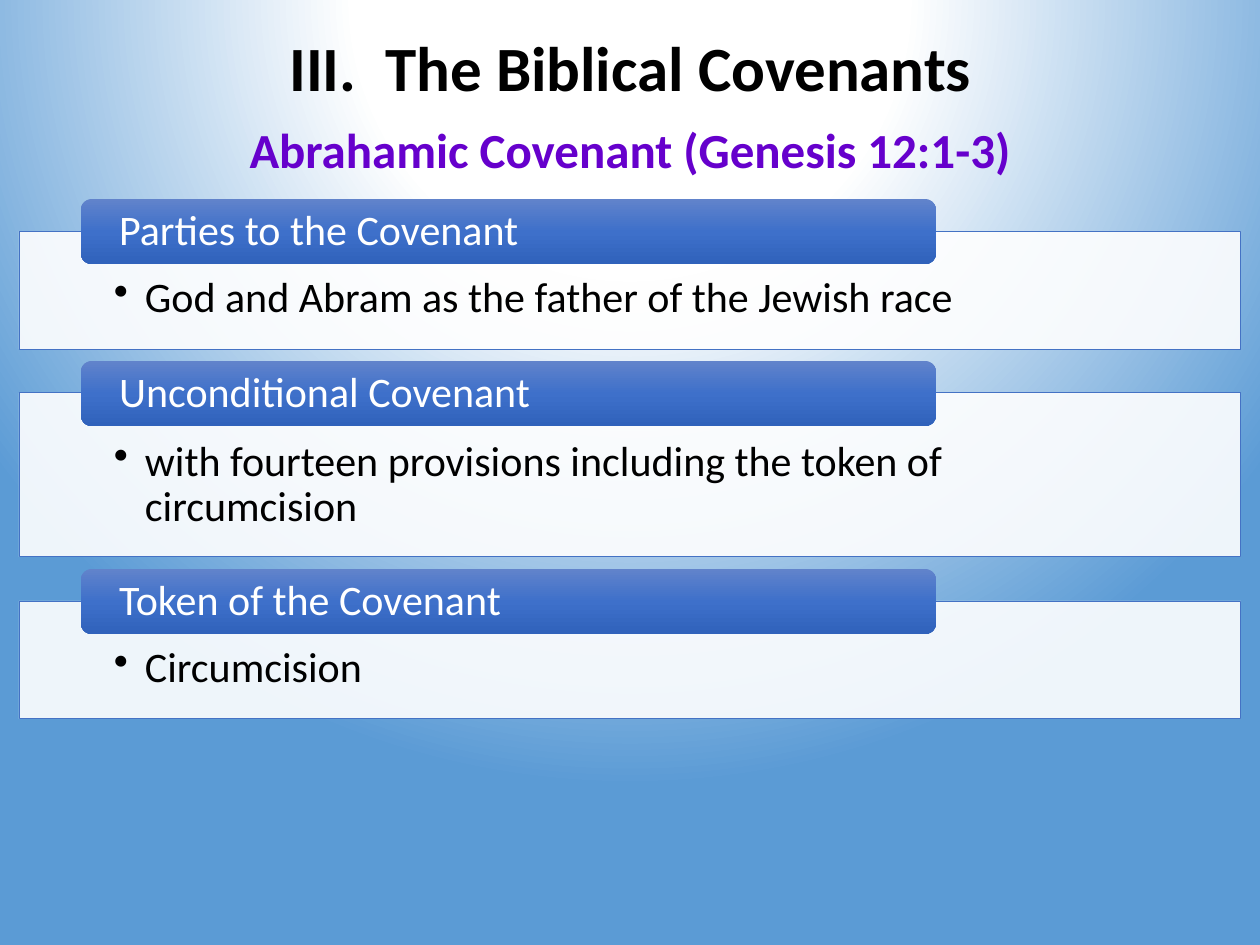
from dataclasses import dataclass

from lxml.etree import SubElement
from pptx import Presentation
from pptx.dml.color import RGBColor
from pptx.enum.shapes import MSO_SHAPE
from pptx.enum.text import MSO_ANCHOR, PP_ALIGN
from pptx.oxml.ns import qn
from pptx.util import Emu, Pt

TITLE = "The Biblical Covenants"
SUBTITLE = "Abrahamic Covenant (Genesis 12:1-3)"
SECTIONS = [  # heading, point, panel height, anchor of the point
    ("Parties to the Covenant", "God and Abram as the father of the Jewish race",
     118, MSO_ANCHOR.TOP),
    ("Unconditional Covenant",
     "with fourteen provisions including the token of circumcision",
     164, MSO_ANCHOR.MIDDLE),
    ("Token of the Covenant", "Circumcision", 118, MSO_ANCHOR.TOP),
]


@dataclass(frozen=True)
class Theme:
    font: str = "Calibri"
    title: int = 36
    subtitle: int = 28
    body: int = 24
    black: str = "000000"
    white: str = "FFFFFF"
    purple: str = "6600CC"
    outline: str = "4472C4"
    heading: tuple = ((0, "6183CB"), (50, "3E70CA"), (100, "3062BB"))
    backdrop: tuple = ((0, "FFFFFF"), (35, "FFFFFF"), (100, "5B9BD5"))


THEME = Theme()
WIDTH, HEIGHT = 1260, 945
PANEL_X, PANEL_TOP, PANEL_GAP = 19, 231, 44
HEAD_X, HEAD_W, HEAD_H, HEAD_RISE = 81, 855, 65, 32


def px(n):
    return Emu(round(n * 914400 / 126))


def box(*lengths):
    return [px(n) for n in lengths]


def set_gradient(fill, grad_parent, stops, angle=None):
    """Linear when an angle is given, otherwise circular from above the slide."""
    fill.gradient()
    grad = grad_parent.find(qn("a:gradFill"))
    for child in list(grad):
        grad.remove(child)
    gs_list = SubElement(grad, qn("a:gsLst"))
    for position, colour in stops:
        gs = SubElement(gs_list, qn("a:gs"), pos=str(position * 1000))
        SubElement(gs, qn("a:srgbClr"), val=colour)
    if angle is not None:
        SubElement(grad, qn("a:lin"), ang=str(angle * 60000), scaled="0")
    else:
        circle = SubElement(grad, qn("a:path"), path="circle")
        SubElement(circle, qn("a:fillToRect"),
                   l="50000", t="-80000", r="50000", b="180000")


def add_text(shape, text, size=THEME.body, color=THEME.black, bold=False,
             align=PP_ALIGN.LEFT, anchor=MSO_ANCHOR.MIDDLE, margins=(13, 6, 13, 6),
             spacing=0.9, level=0, hang=0, bullet=None):
    """bullet is a pair: the bullet tag and its attributes."""
    tf = shape.text_frame
    tf.word_wrap = True
    tf.vertical_anchor = anchor
    tf.margin_left, tf.margin_top, tf.margin_right, tf.margin_bottom = box(*margins)
    p = tf.paragraphs[0]
    p.alignment, p.level, p.line_spacing = align, level, spacing
    if bullet:
        tag, attributes = bullet
        pPr = p._p.get_or_add_pPr()
        pPr.set("marL", str(px(hang)))
        pPr.set("indent", str(-px(hang)))
        SubElement(pPr, qn(tag), attributes)
    r = p.add_run()
    r.text = text
    r.font.name, r.font.size, r.font.bold = THEME.font, Pt(size), bold
    r.font.color.rgb = RGBColor.from_string(color)


def add_panel(s, y, height, point, anchor):
    sp = s.shapes.add_shape(MSO_SHAPE.RECTANGLE,
                            *box(PANEL_X, y, WIDTH - 2 * PANEL_X, height))
    sp.shadow.inherit = False
    sp.fill.solid()
    sp.fill.fore_color.rgb = RGBColor.from_string(THEME.white)
    colour = sp._element.spPr.find(qn("a:solidFill")).find(qn("a:srgbClr"))
    SubElement(colour, qn("a:alpha"), val="90000")
    sp.line.color.rgb = RGBColor.from_string(THEME.outline)
    sp.line.width = Pt(0.5)
    add_text(sp, point, anchor=anchor, margins=(95, 45, 95, 24), level=1,
             hang=31, bullet=("a:buChar", {"char": "•"}))


def add_heading(s, y, heading):
    sp = s.shapes.add_shape(MSO_SHAPE.ROUNDED_RECTANGLE,
                            *box(HEAD_X, y, HEAD_W, HEAD_H))
    sp.shadow.inherit = False
    set_gradient(sp.fill, sp._element.spPr, THEME.heading, angle=90)
    sp.line.fill.background()
    add_text(sp, heading, color=THEME.white, margins=(35, 0, 35, 0))


def main():
    prs = Presentation()
    prs.slide_width, prs.slide_height = box(WIDTH, HEIGHT)
    s = prs.slides.add_slide(prs.slide_layouts[6])
    fill = s.background.fill
    set_gradient(fill, s.element.xpath("p:cSld/p:bg/p:bgPr")[0], THEME.backdrop)

    y = PANEL_TOP
    for heading, point, height, anchor in SECTIONS:
        add_panel(s, y, height, point, anchor)
        add_heading(s, y - HEAD_RISE, heading)
        y += height + PANEL_GAP

    add_text(s.shapes.add_textbox(*box(222, 113, 816, 72)), SUBTITLE,
             size=THEME.subtitle, color=THEME.purple, bold=True,
             align=PP_ALIGN.CENTER, anchor=MSO_ANCHOR.TOP, spacing=1.0)
    add_text(s.shapes.add_textbox(*box(158, 28, 945, 86)), TITLE,
             size=THEME.title, bold=True, align=PP_ALIGN.CENTER, hang=96,
             bullet=("a:buAutoNum", {"type": "romanUcPeriod", "startAt": "3"}))
    prs.save("out.pptx")


if __name__ == "__main__":
    main()
